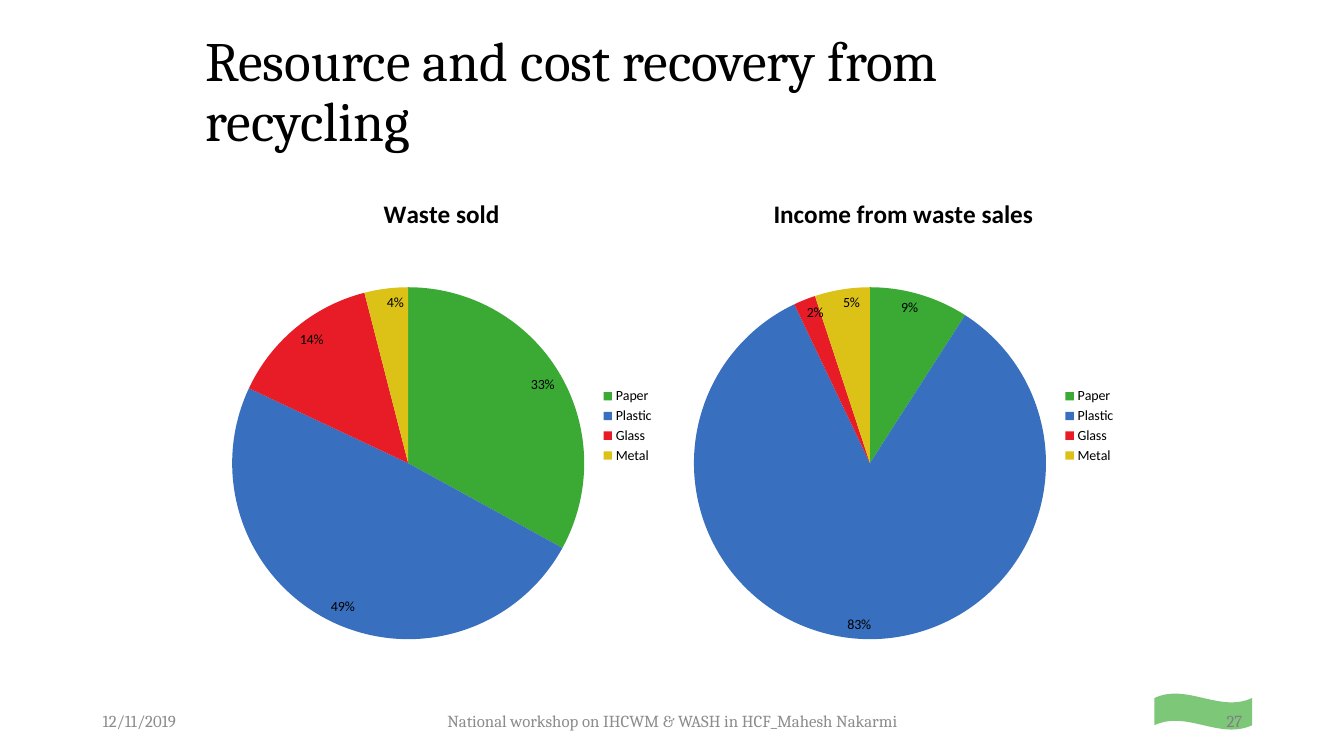
from lxml import etree
from pptx import Presentation
from pptx.chart.data import CategoryChartData
from pptx.dml.color import RGBColor
from pptx.enum.chart import XL_CHART_TYPE, XL_LABEL_POSITION, XL_LEGEND_POSITION
from pptx.enum.shapes import MSO_SHAPE
from pptx.enum.text import MSO_ANCHOR, PP_ALIGN
from pptx.oxml import parse_xml
from pptx.oxml.ns import nsdecls, qn
from pptx.util import Inches, Pt

PIE = XL_CHART_TYPE.PIE
INSIDE_END = XL_LABEL_POSITION.INSIDE_END
LEGEND_RIGHT = XL_LEGEND_POSITION.RIGHT
MIDDLE = MSO_ANCHOR.MIDDLE
LEFT, CENTER, RIGHT = PP_ALIGN.LEFT, PP_ALIGN.CENTER, PP_ALIGN.RIGHT

COLORS = {
    "text": "000000", "footer": "8C8C8C", "number": "808080",
    "Paper": "3AAA35", "Plastic": "3870BF", "Glass": "E81C26", "Metal": "DCC217",
}
MATERIALS = ["Paper", "Plastic", "Glass", "Metal"]

# text, (left, top, width, height), size, color, alignment, line spacing
TEXTS = [
    ("Resource and cost recovery from recycling",
     (1.94, 0.3, 9.53, 1.25), 39.6, "text", LEFT, 0.9),
    ("12/11/2019", (0.92, 6.95, 1.31, 0.4), 12, "footer", LEFT, 1.0),
    ("National workshop on IHCWM & WASH in HCF_Mahesh Nakarmi",
     (2.37, 6.95, 8.6, 0.4), 12, "footer", CENTER, 1.0),
    ("27", (11.3, 6.95, 1.12, 0.4), 12, "number", RIGHT, 1.0),
]

# title, shares in percent, top of the pie as a fraction of the chart height
CHARTS = [
    ("Waste sold", (33, 49, 14, 4), 0.22),
    ("Income from waste sales", (9, 83, 2, 5), 0.22),
]
CHART_LEFT, CHART_TOP, CHART_W, CHART_H = 2.17, 1.75, 4.42, 4.95
CHART_STEP = 4.58
PIE_X, PIE_W, PIE_H = 0.03, 0.79, 0.71


def rgb(name):
    return RGBColor.from_string(COLORS[name])


def add_text(slide, text, box, size, color, align, spacing):
    tf = slide.shapes.add_textbox(*map(Inches, box)).text_frame
    tf.word_wrap = True
    tf.vertical_anchor = MIDDLE
    tf.text = text
    p = tf.paragraphs[0]
    p.alignment = align
    p.line_spacing = spacing
    font = p.runs[0].font
    font.name, font.size = "Cambria", Pt(size)
    font.color.rgb = rgb(color)


def place_pie(chart, top):
    """Fix the inner plot area as fractions of the chart."""
    area = chart.plots[0]._element.getparent()
    for old in area.findall(qn("c:layout")):
        area.remove(old)
    layout = parse_xml(f"<c:layout {nsdecls('c')}><c:manualLayout/></c:layout>")
    settings = {"layoutTarget": "inner", "xMode": "edge", "yMode": "edge",
                "x": PIE_X, "y": top, "w": PIE_W, "h": PIE_H}
    for tag, val in settings.items():
        etree.SubElement(layout[0], qn(f"c:{tag}")).set("val", str(val))
    area.insert(0, layout)


def add_pie(slide, left, title, shares, pie_top):
    data = CategoryChartData()
    data.categories = MATERIALS
    data.add_series("Series 1", shares)
    box = (left, CHART_TOP, CHART_W, CHART_H)
    chart = slide.shapes.add_chart(PIE, *map(Inches, box), data).chart
    chart.font.name, chart.font.size = "Calibri", Pt(10)
    chart.font.color.rgb = rgb("text")

    chart.has_title = True
    tf = chart.chart_title.text_frame
    tf.text = title
    font = tf.paragraphs[0].runs[0].font
    font.name, font.size, font.bold = "Calibri", Pt(18), True
    font.color.rgb = rgb("text")

    chart.has_legend = True
    chart.legend.position = LEGEND_RIGHT
    chart.legend.include_in_layout = False

    plot = chart.plots[0]
    plot.vary_by_categories = True
    plot.has_data_labels = True
    labels = plot.data_labels
    labels.show_value = True
    labels.number_format, labels.number_format_is_linked = '0"%"', False
    labels.position = INSIDE_END
    for i, material in enumerate(MATERIALS):
        fill = plot.series[0].points[i].format.fill
        fill.solid()
        fill.fore_color.rgb = rgb(material)
    place_pie(chart, pie_top)


def add_ribbon(slide):
    ribbon = slide.shapes.add_shape(
        MSO_SHAPE.WAVE, Inches(11.45), Inches(6.88), Inches(0.97), Inches(0.36))
    ribbon.shadow.inherit = False
    ribbon.line.fill.background()
    ribbon.fill.solid()
    ribbon.fill.fore_color.rgb = rgb("Paper")
    color = ribbon._element.spPr.find(f".//{qn('a:srgbClr')}")
    etree.SubElement(color, qn("a:alpha")).set("val", "66000")


def main():
    prs = Presentation()
    prs.slide_width, prs.slide_height = Inches(13.33), Inches(7.5)
    slide = prs.slides.add_slide(prs.slide_layouts[6])
    add_ribbon(slide)
    for i, (title, shares, pie_top) in enumerate(CHARTS):
        add_pie(slide, CHART_LEFT + i * CHART_STEP, title, shares, pie_top)
    for item in TEXTS:
        add_text(slide, *item)
    prs.save("out.pptx")


if __name__ == "__main__":
    main()
